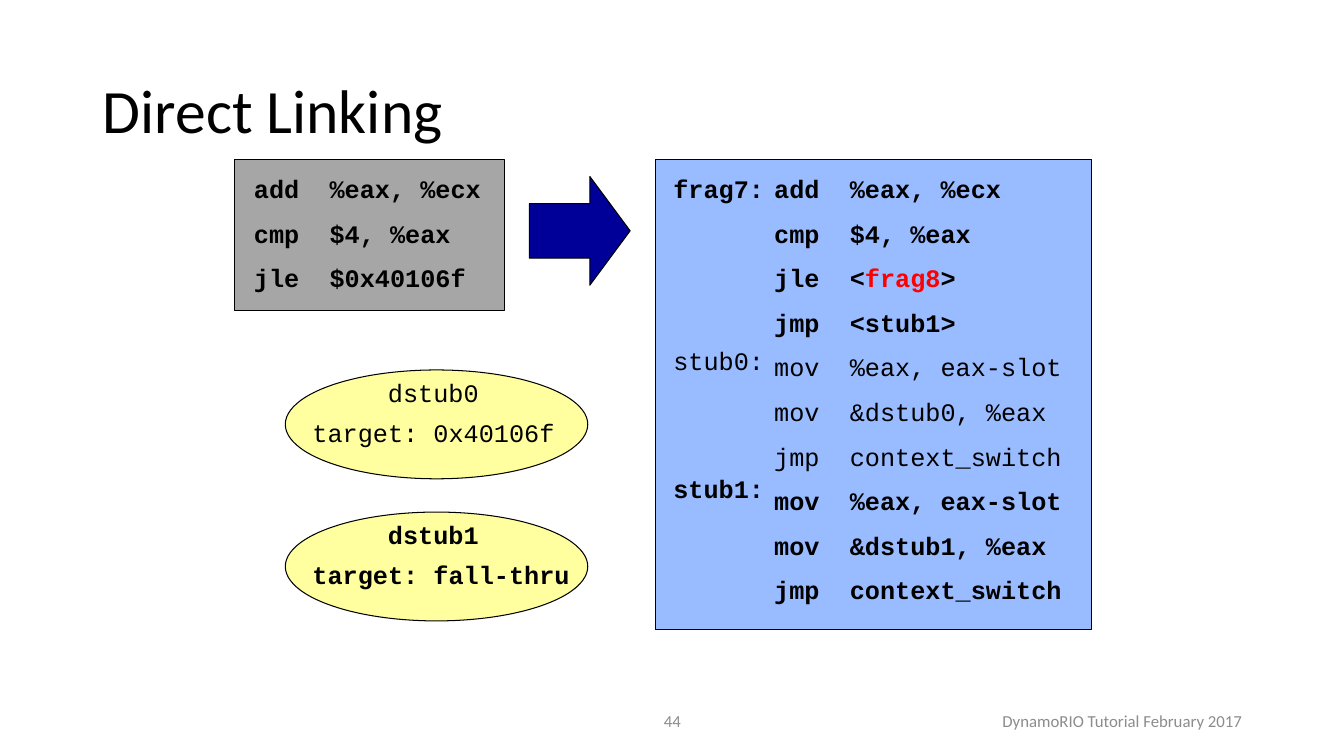
"""Build the Direct Linking slide."""
from dataclasses import dataclass
from typing import Any

from pptx import Presentation
from pptx.dml.color import RGBColor
from pptx.enum.shapes import MSO_SHAPE
from pptx.enum.text import MSO_ANCHOR, PP_ALIGN
from pptx.util import Inches, Pt


@dataclass(frozen=True)
class Theme:
    sans: str = "Calibri"
    mono: str = "Courier New"
    ink: str = "000000"
    mute: str = "8C8C8C"
    alert: str = "FF0000"
    source: str = "A6A6A6"
    cache: str = "99BBFF"
    arrow: str = "000099"
    stub: str = "FFFF9F"
    head: float = 44
    code: float = 18
    foot: float = 12
    gap: float = 10.25
    edge: float = 0.75


THEME = Theme()


@dataclass(frozen=True)
class Box:
    left: float
    top: float
    width: float
    height: float

    def place(self) -> tuple:
        return tuple(map(Inches, (self.left, self.top, self.width, self.height)))


@dataclass(frozen=True)
class Run:
    text: str
    bold: bool = True
    color: str = THEME.ink


@dataclass(frozen=True)
class Panel:
    kind: Any
    box: Box
    fill: str
    adjust: tuple = ()


@dataclass(frozen=True)
class Code:
    box: Box
    lines: tuple


@dataclass(frozen=True)
class Foot:
    box: Box
    text: str
    align: Any


def style(target: Any, values: dict) -> None:
    for name, value in values.items():
        setattr(target, name, value)


def write(para: Any, run: Run, face: str, size: float) -> None:
    item = para.add_run()
    item.text = run.text
    style(item.font, {"name": face, "size": Pt(size), "bold": run.bold})
    item.font.color.rgb = RGBColor.from_string(run.color)


def draw_panel(slide: Any, panel: Panel) -> None:
    shape = slide.shapes.add_shape(panel.kind, *panel.box.place())
    shape.shadow.inherit = False
    shape.fill.solid()
    shape.fill.fore_color.rgb = RGBColor.from_string(panel.fill)
    shape.line.color.rgb = RGBColor.from_string(THEME.ink)
    shape.line.width = Pt(THEME.edge)
    for index, value in enumerate(panel.adjust):
        shape.adjustments[index] = value


def draw_code(slide: Any, code: Code) -> None:
    frame = slide.shapes.add_textbox(*code.box.place()).text_frame
    frame.word_wrap = True
    for index, line in enumerate(code.lines):
        para = frame.add_paragraph() if index else frame.paragraphs[0]
        if index:
            para.space_before = Pt(THEME.gap)
        for run in line:
            write(para, run, THEME.mono, THEME.code)


def draw_foot(slide: Any, foot: Foot) -> None:
    frame = slide.shapes.add_textbox(*foot.box.place()).text_frame
    style(frame, {"word_wrap": True, "vertical_anchor": MSO_ANCHOR.MIDDLE})
    para = frame.paragraphs[0]
    para.alignment = foot.align
    write(para, Run(foot.text, False, THEME.mute), THEME.sans, THEME.foot)


def draw_title(slide: Any, text: str, box: Box) -> None:
    title = slide.shapes.title
    style(title, dict(zip(("left", "top", "width", "height"), box.place())))
    title.text_frame.vertical_anchor = MSO_ANCHOR.MIDDLE
    para = title.text_frame.paragraphs[0]
    style(para, {"alignment": PP_ALIGN.LEFT, "line_spacing": 0.9})
    write(para, Run(text, False), THEME.sans, THEME.head)


def plain(*lines: str, bold: bool = True) -> tuple:
    return tuple((Run(line, bold),) for line in lines)


def stub(name: str, bold: bool) -> tuple:
    return plain("mov  %eax, eax-slot", f"mov  &{name}, %eax",
                 "jmp  context_switch", bold=bold)


START = ("add  %eax, %ecx", "cmp  $4, %eax")
JUMP = (Run("jle  <"), Run("frag8", color=THEME.alert), Run(">"))
BODY = (plain(*START) + (JUMP,) + plain("jmp  <stub1>")
        + stub("dstub0", False) + stub("dstub1", True))
TOP = 1.67
PITCH = 0.4256
LABELS = ((0, "frag7:", True), (4, "stub0:", False), (7, "stub1:", True))
STUBS = ((3.67, "dstub0", "target: 0x40106f", False),
         (5.08, "dstub1", "target: fall-thru", True))
PANELS = (
    Panel(MSO_SHAPE.RECTANGLE, Box(6.5, 1.58, 4.33, 4.67), THEME.cache),
    Panel(MSO_SHAPE.RECTANGLE, Box(2.33, 1.58, 2.67, 1.5), THEME.source),
    Panel(MSO_SHAPE.RIGHT_ARROW, Box(5.25, 1.75, 1, 1.08), THEME.arrow, (0.5, 0.4)),
)
CODES = (
    Code(Box(2.42, TOP, 2.83, 1.3), plain(*START, "jle  $0x40106f")),
    Code(Box(7.58, TOP, 3.25, 4.46), BODY),
)
FEET = (
    Foot(Box(4.42, 6.95, 4.5, 0.4), "44", PP_ALIGN.CENTER),
    Foot(Box(9.42, 6.95, 3, 0.4), "DynamoRIO Tutorial February 2017", PP_ALIGN.RIGHT),
)


def main() -> None:
    deck = Presentation()
    style(deck, {"slide_width": Inches(13.33), "slide_height": Inches(7.5)})
    slide = deck.slides.add_slide(deck.slide_layouts[5])
    draw_title(slide, "Direct Linking", Box(0.92, 0.4, 11.5, 1.45))
    for panel in PANELS:
        draw_panel(slide, panel)
    for code in CODES:
        draw_code(slide, code)
    for row, text, bold in LABELS:
        box = Box(6.58, TOP + row * PITCH, 1.11, 0.4)
        draw_code(slide, Code(box, plain(text, bold=bold)))
    for top, name, target, bold in STUBS:
        draw_panel(slide, Panel(MSO_SHAPE.OVAL, Box(2.83, top, 3, 1.08), THEME.stub))
        draw_code(slide, Code(Box(3.75, top + 0.02, 1.17, 0.4), plain(name, bold=bold)))
        draw_code(slide, Code(Box(3, top + 0.42, 2.92, 0.4), plain(target, bold=bold)))
    for foot in FEET:
        draw_foot(slide, foot)
    deck.save("out.pptx")


if __name__ == "__main__":
    main()
